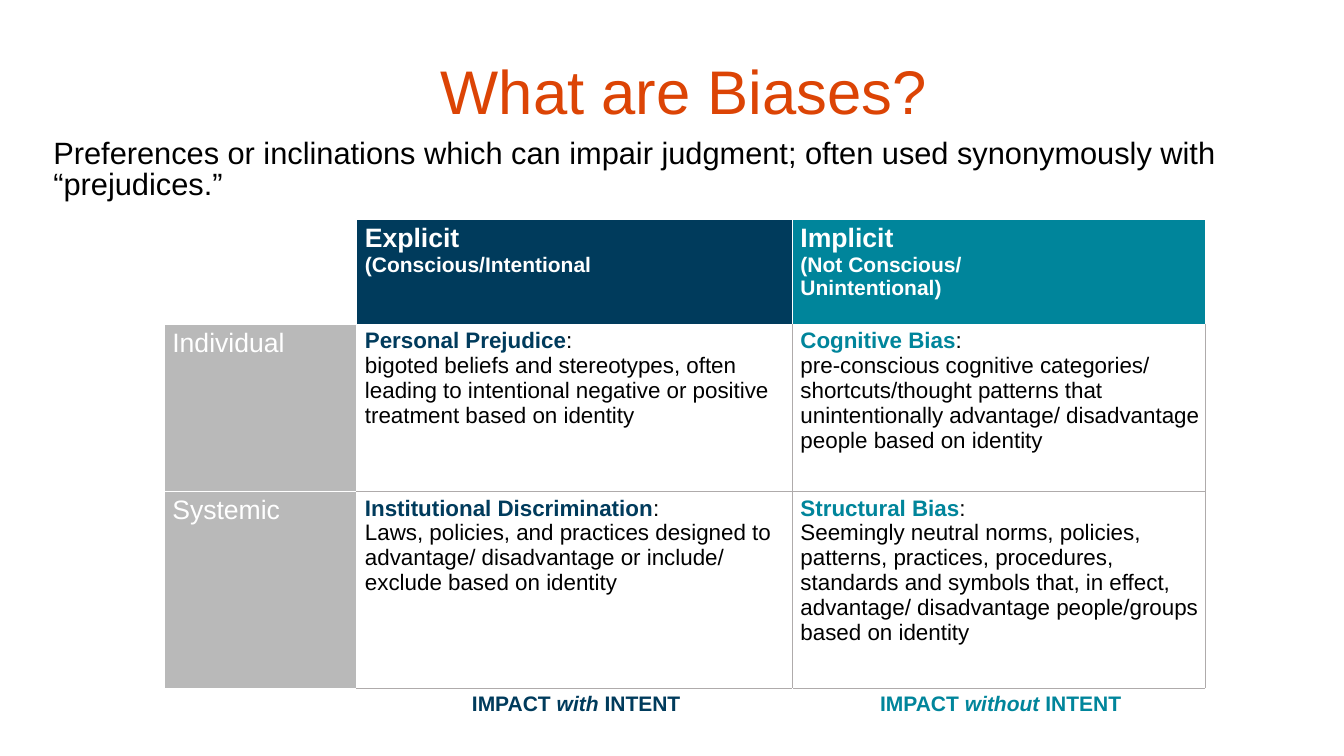
from lxml import etree
from pptx import Presentation
from pptx.dml.color import RGBColor
from pptx.enum.text import MSO_ANCHOR, MSO_AUTO_SIZE, PP_ALIGN
from pptx.oxml.ns import qn
from pptx.util import Emu, Pt

CENTER, LEFT = PP_ALIGN.CENTER, PP_ALIGN.LEFT
TOP, MIDDLE = MSO_ANCHOR.TOP, MSO_ANCHOR.MIDDLE
NO_AUTOFIT = MSO_AUTO_SIZE.NONE

PX = 9144  # 100 px to the inch
FONT = "Arial"
COLORS = {
    "orange": "DC4405",
    "navy": "003B5C",
    "teal": "00859B",
    "label": "B9B9B9",
    "rule": "AFABAB",
    "white": "FFFFFF",
    "black": "000000",
}

COLUMN_WIDTHS = [191, 432, 410]
ROW_HEIGHTS = [104, 166, 195, 32]
COLUMN_COLORS = ["label", "navy", "teal"]
HEADERS = [
    ("Explicit", "(Conscious/Intentional"),
    ("Implicit", "(Not Conscious/\nUnintentional)"),
]
BIASES = [
    ("Individual", [
        ("Personal Prejudice",
         "bigoted beliefs and stereotypes, often leading to intentional "
         "negative or positive treatment based on identity"),
        ("Cognitive Bias",
         "pre-conscious cognitive categories/ shortcuts/thought patterns that "
         "unintentionally advantage/ disadvantage people based on identity"),
    ]),
    ("Systemic", [
        ("Institutional Discrimination",
         "Laws, policies, and practices designed to advantage/ disadvantage "
         "or include/ exclude based on identity"),
        ("Structural Bias",
         "Seemingly neutral norms, policies, patterns, practices, procedures, "
         "standards and symbols that, in effect, advantage/ disadvantage "
         "people/groups based on identity"),
    ]),
]
IMPACTS = ["with", "without"]


def px(length):
    return Emu(length * PX)


def rgb(name):
    return RGBColor.from_string(COLORS[name])


def add_text(paragraph, text, size=16, color="black", bold=False,
             italic=False, align=LEFT):
    """Append formatted text; a newline becomes a line break."""
    paragraph.alignment = align
    for number, line in enumerate(text.split("\n")):
        if number:
            paragraph.add_line_break()
        run = paragraph.add_run()
        run.text = line
        run.font.name = FONT
        run.font.size = Pt(size)
        run.font.bold = bold
        run.font.italic = italic
        run.font.color.rgb = rgb(color)


def place(placeholder, left, top, width, height, anchor):
    placeholder.left, placeholder.top = px(left), px(top)
    placeholder.width, placeholder.height = px(width), px(height)
    frame = placeholder.text_frame
    frame.word_wrap = True
    frame.auto_size = NO_AUTOFIT
    frame.vertical_anchor = anchor
    return frame.paragraphs[0]


def is_definition(row, column):
    return row in (1, 2) and column in (1, 2)


def edge_color(row, column):
    return "rule" if is_definition(row, column) else "white"


def set_borders(cell, row, column):
    """Each cell owns its right and bottom edge; the others match the neighbour."""
    edges = {
        "a:lnL": edge_color(row, column - 1),
        "a:lnR": edge_color(row, column),
        "a:lnT": edge_color(row - 1, column),
        "a:lnB": edge_color(row, column),
    }
    properties = cell._tc.get_or_add_tcPr()
    for position, (tag, color) in enumerate(edges.items()):
        line = etree.Element(qn(tag), w=str(Pt(1)))
        fill = etree.SubElement(line, qn("a:solidFill"))
        etree.SubElement(fill, qn("a:srgbClr"), val=COLORS[color])
        properties.insert(position, line)


def fill_cell(cell, color):
    cell.fill.solid()
    cell.fill.fore_color.rgb = rgb(color)


def add_bias_table(slide):
    frame = slide.shapes.add_table(
        len(ROW_HEIGHTS), len(COLUMN_WIDTHS), px(163), px(218),
        px(sum(COLUMN_WIDTHS)), px(sum(ROW_HEIGHTS)))
    table = frame.table
    table.first_row = table.horz_banding = False
    for column, width in zip(table.columns, COLUMN_WIDTHS):
        column.width = px(width)
    for row, height in zip(table.rows, ROW_HEIGHTS):
        row.height = px(height)

    # Shared cell format
    for row in range(len(ROW_HEIGHTS)):
        for column in range(len(COLUMN_WIDTHS)):
            cell = table.cell(row, column)
            cell.margin_left, cell.margin_right = px(8), px(5)
            cell.margin_top = cell.margin_bottom = px(4)
            cell.fill.background()
            set_borders(cell, row, column)
            if is_definition(row, column):
                fill_cell(cell, "white")

    # Header row and impact row
    for column, ((name, note), impact) in enumerate(zip(HEADERS, IMPACTS), 1):
        color = COLUMN_COLORS[column]
        header = table.cell(0, column)
        fill_cell(header, color)
        heading = header.text_frame.paragraphs[0]
        add_text(heading, name + "\n", size=19, color="white", bold=True)
        add_text(heading, note, size=15, color="white", bold=True)

        footer = table.cell(3, column).text_frame.paragraphs[0]
        for word, italic in (("IMPACT ", False), (impact, True), (" INTENT", False)):
            add_text(footer, word, size=15, color=color, bold=True,
                     italic=italic, align=CENTER)

    # Level labels and definitions
    for row, (level, definitions) in enumerate(BIASES, 1):
        label = table.cell(row, 0)
        fill_cell(label, "label")
        add_text(label.text_frame.paragraphs[0], level, size=19, color="white")
        for column, (term, meaning) in enumerate(definitions, 1):
            body = table.cell(row, column).text_frame
            add_text(body.paragraphs[0], term, color=COLUMN_COLORS[column], bold=True)
            add_text(body.paragraphs[0], ":")
            add_text(body.add_paragraph(), meaning)

    # Keep the empty corner from stretching the impact row
    corner = table.cell(3, 0).text_frame.paragraphs[0]
    etree.SubElement(corner._p, qn("a:endParaRPr"), sz="1200")


def main():
    deck = Presentation()
    deck.slide_width, deck.slide_height = px(1333), px(750)
    slide = deck.slides.add_slide(deck.slide_layouts[1])

    # Title
    title = place(slide.shapes.title, 224, 47, 909, 84, MIDDLE)
    add_text(title, "What are Biases?", size=44, color="orange", align=CENTER)

    # Definition
    definition = place(slide.placeholders[1], 43, 133, 1272, 73, TOP)
    add_text(definition, "Preferences or inclinations which can impair judgment; "
             "often used synonymously with “prejudices.”", size=22)
    definition.line_spacing = 0.85
    definition.space_before = Pt(0)
    paragraph_format = definition._p.get_or_add_pPr()
    paragraph_format.set("marL", "0")
    paragraph_format.set("indent", "0")
    etree.SubElement(paragraph_format, qn("a:buNone"))

    add_bias_table(slide)
    deck.save("out.pptx")


if __name__ == "__main__":
    main()
